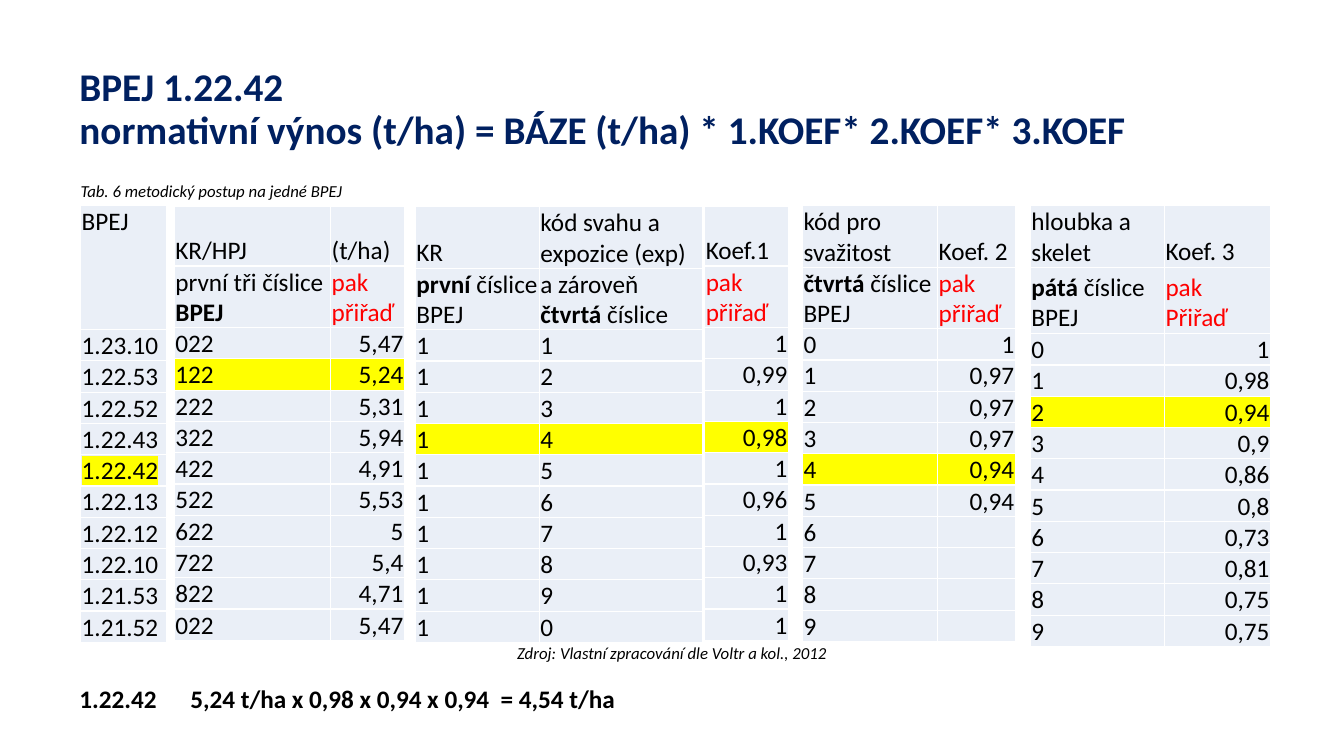
from dataclasses import dataclass

from lxml.etree import SubElement
from pptx import Presentation
from pptx.dml.color import RGBColor
from pptx.enum.text import MSO_ANCHOR as Anchor, PP_ALIGN as Align
from pptx.oxml.ns import qn
from pptx.util import Inches, Pt

COLORS = {"title": "002060", "text": "000000", "assign": "FF0000",
          "cell": "EAEFF7", "chosen": "FFFF00", "border": "FFFFFF"}
FONT = "Calibri"
ROW = 0.31
ASSIGN = "pak\npřiřaď"


@dataclass
class Lookup:
    """One lookup table: header rows, then ten data rows; chosen is the marked one."""
    left: float
    top: float
    widths: list
    header_heights: list
    headers: list
    columns: list
    chosen: int = -1


LOOKUPS = [
    Lookup(4.12, 2.05, [1.23, 1.62], [0.61, 0.61],
           [["KR", "kód svahu a expozice (exp)"],
            ["**první **číslice BPEJ", "a zároveň **čtvrtá** číslice"]],
           [["1"] * 10, list("1234567890")], 3),
    Lookup(6.99, 2.05, [0.83], [0.59, 0.61],
           [["Koef.1"], [ASSIGN]],
           ["1 0,99 1 0,98 1 0,96 1 0,93 1 1".split()], 3),
    Lookup(7.96, 2.04, [1.34, 0.77], [0.61, 0.61],
           [["kód pro\nsvažitost", "Koef. 2"],
            ["**čtvrtá** číslice\nBPEJ", ASSIGN]],
           [list("0123456789"),
            "1 0,97 0,97 0,97 0,94 0,94".split() + [""] * 4], 4),
    Lookup(10.22, 2.04, [1.33, 1.05], [0.6, 0.66],
           [["hloubka a skelet", "Koef. 3"],
            ["**pátá** číslice BPEJ", "pak\nPřiřaď"]],
           [list("0123456789"),
            "1 0,98 0,94 0,9 0,86 0,8 0,73 0,81 0,75 0,75".split()], 2),
    Lookup(1.73, 2.05, [1.55, 0.73], [0.59, 0.61],
           [["KR/HPJ", "(t/ha)"],
            ["první tři číslice\n**BPEJ**", ASSIGN]],
           ["022 122 222 322 422 522 622 722 822 022".split(),
            "5,47 5,24 5,31 5,94 4,91 5,53 5 5,4 4,71 5,47".split()], 1),
]
CODES = Lookup(0.8, 2.04, [0.85], [1.23], [["BPEJ"]],
               ["1.23.10 1.22.53 1.22.52 1.22.43 1.22.42 "
                "1.22.13 1.22.12 1.22.10 1.21.53 1.21.52".split()])
CHOSEN_CODE = "1.22.42"


def write(frame, text, size=18, color="text", bold=False, italic=False,
          align=Align.LEFT, spacing=None, highlight=None):
    """Fill a text frame; newlines split paragraphs, **marks** toggle bold."""
    for number, line in enumerate(text.split("\n")):
        paragraph = frame.add_paragraph() if number else frame.paragraphs[0]
        paragraph.alignment = align
        if spacing:
            paragraph.line_spacing = spacing
        for part, words in enumerate(line.split("**")):
            if not words:
                continue
            run = paragraph.add_run()
            run.text = words
            font = run.font
            font.name, font.size = FONT, Pt(size)
            font.bold, font.italic = bold or part % 2 == 1, italic
            font.color.rgb = RGBColor.from_string(COLORS[color])
            if highlight:
                mark = SubElement(run._r.rPr, qn("a:highlight"))
                SubElement(mark, qn("a:srgbClr"), val=COLORS[highlight])
                run._r.rPr.find(qn("a:solidFill")).addnext(mark)


def add_text(slide, box, text, anchor=Anchor.TOP, **style):
    frame = slide.shapes.add_textbox(*map(Inches, box)).text_frame
    frame.word_wrap = True
    frame.vertical_anchor = anchor
    write(frame, text, **style)
    return frame


def paint_cell(cell, color):
    properties = cell._tc.get_or_add_tcPr()
    for side in ("lnL", "lnR", "lnT", "lnB"):
        line = SubElement(properties, qn(f"a:{side}"), w=str(Pt(1)))
        SubElement(SubElement(line, qn("a:solidFill")), qn("a:srgbClr"),
                   val=COLORS["border"])
    cell.fill.solid()
    cell.fill.fore_color.rgb = RGBColor.from_string(COLORS[color])
    cell.margin_left = cell.margin_right = cell.margin_top = Inches(0.01)
    cell.margin_bottom = 0


def add_lookup(slide, lookup):
    rows = lookup.headers + list(zip(*lookup.columns))
    heights = lookup.header_heights + [ROW] * len(lookup.columns[0])
    box = lookup.left, lookup.top, sum(lookup.widths), sum(heights)
    table = slide.shapes.add_table(len(rows), len(lookup.widths),
                                   *map(Inches, box)).table
    table.first_row = table.horz_banding = False
    for column, width in zip(table.columns, lookup.widths):
        column.width = Inches(width)
    for row, height in zip(table.rows, heights):
        row.height = Inches(height)

    header_count = len(lookup.headers)
    for r, texts in enumerate(rows):
        is_header = r < header_count
        is_chosen = r - header_count == lookup.chosen and not is_header
        for c, text in enumerate(texts):
            cell = table.cell(r, c)
            paint_cell(cell, "chosen" if is_chosen else "cell")
            cell.vertical_anchor = Anchor.BOTTOM if is_header else Anchor.MIDDLE
            assigned = lookup.headers[-1][c].startswith("pak")
            write(cell.text_frame, text,
                  color="assign" if text.startswith("pak") else "text",
                  align=Align.RIGHT if assigned and not is_header else Align.LEFT,
                  highlight="chosen" if text == CHOSEN_CODE else None)
    return table


def add_heading(slide):
    add_text(slide, (0.69, 0.37, 11.5, 1.45),
             "BPEJ 1.22.42\n"
             "normativní výnos (t/ha) = BÁZE (t/ha) * 1.KOEF* 2.KOEF* 3.KOEF",
             anchor=Anchor.MIDDLE, size=28, color="title", bold=True, spacing=0.9)
    add_text(slide, (0.7, 1.74, 3.42, 0.3),
             "Tab. 6 metodický postup na jedné BPEJ", size=12, italic=True)


def add_result(slide):
    result = add_text(slide, (0.69, 6.73, 12.14, 0.4),
                      "1.22.42\t5,24 t/ha x 0,98 x 0,94 x 0,94  = 4,54 t/ha", bold=True)
    stops = SubElement(result.paragraphs[0]._p.get_or_add_pPr(), qn("a:tabLst"))
    SubElement(stops, qn("a:tab"), pos=str(Inches(1.1)), algn="l")
    add_text(slide, (0.69, 6.33, 11.95, 0.44),
             "Zdroj: Vlastní zpracování dle Voltr a kol., 2012",
             size=12, italic=True, align=Align.CENTER)


def main():
    deck = Presentation()
    deck.slide_width, deck.slide_height = Inches(13.33), Inches(7.5)
    slide = deck.slides.add_slide(deck.slide_layouts[6])
    add_heading(slide)
    for lookup in LOOKUPS:
        add_lookup(slide, lookup)
    codes = add_lookup(slide, CODES)
    codes.cell(0, 0).vertical_anchor = Anchor.TOP
    add_result(slide)
    deck.save("out.pptx")


if __name__ == "__main__":
    main()
